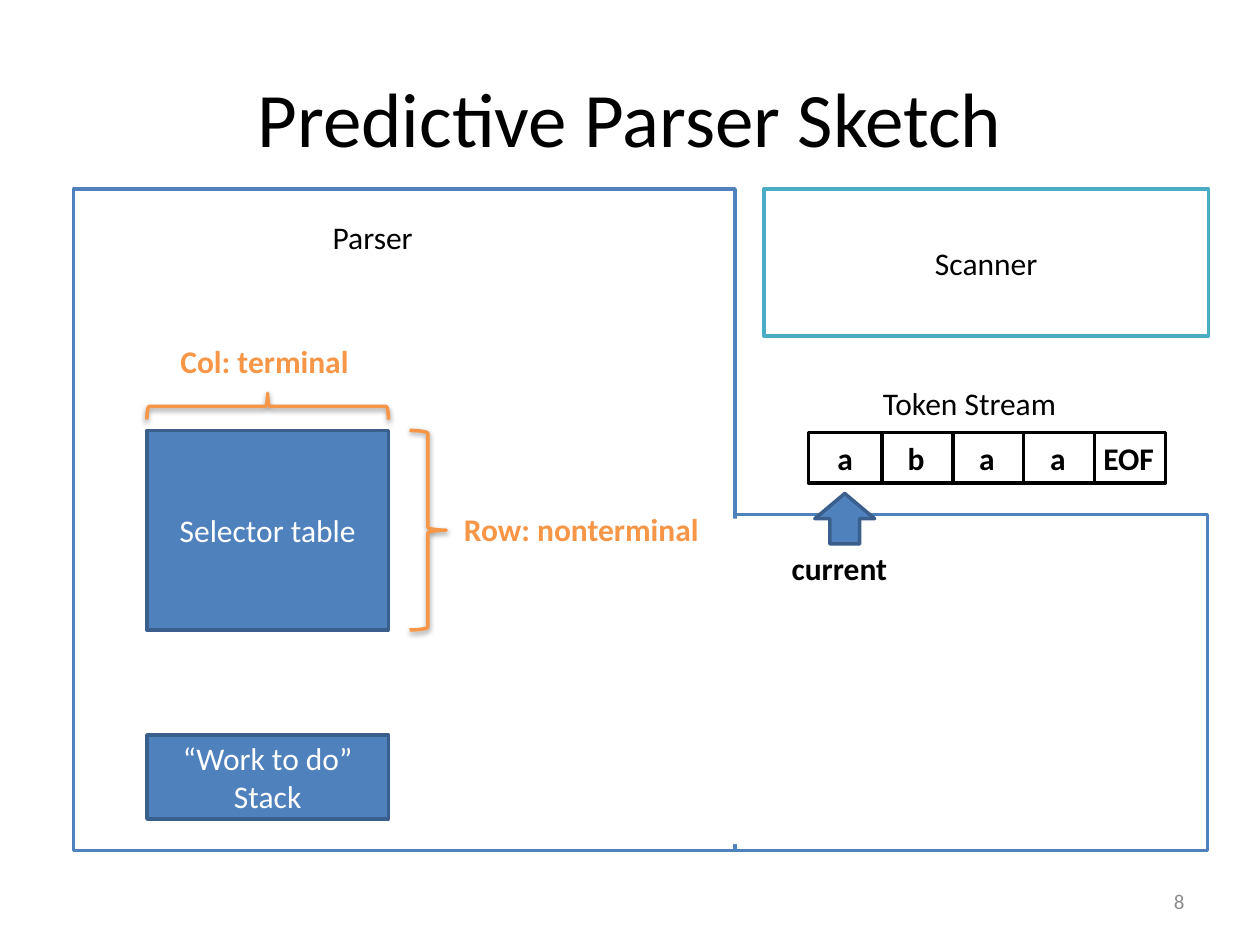
import pptx
import pptx.util
import pptx.dml.color
import pptx.enum.shapes
import pptx.enum.text
import pptx.oxml
import pptx.oxml.ns

KIND = pptx.enum.shapes.MSO_SHAPE
ALIGN = pptx.enum.text.PP_ALIGN
ANCHOR = pptx.enum.text.MSO_ANCHOR
FONT = "Calibri"
COLS, ROWS = 120, 90
HEX = {"white": "FFFFFF", "black": "000000", "blue": "4F81BD", "navy": "3A5F8C",
       "teal": "4BACC6", "orange": "F79646", "gray": "8C8C8C"}

TITLE = ("Predictive Parser Sketch", (6, 3.6, 108, 15))
PANELS = [
    ((68, 49, 47, 32), "white", "blue", []),
    ((7, 18, 63, 63), "white", "blue", []),
    ((68, 49.4, 4.8, 31), "white", None, []),
    ((72.75, 18, 42.35, 14), "white", "teal", ["Scanner"]),
    ((14, 41, 23, 19), "blue", "navy", ["Selector table"]),
    ((14, 70, 23, 8), "blue", "navy", ["“Work to do”", "Stack"]),
]
TOKENS = ["a", "b", "a", "a", "EOF"]
TOKEN = (77, 41.2, 7, 4.8)
PITCH = 6.75
BRACES = [((39, 41, 3.5, 19), 0), ((24.25, 27.2, 2.5, 23), 270)]
ARROW = (77.6, 47, 5.7, 4.8)
LABELS = [
    ("Token Stream", (82.9, 36, 19.1, 4.8), "black", False, ALIGN.LEFT, 18),
    ("Row: nonterminal", (43, 48, 25, 4.8), "orange", True, ALIGN.LEFT, 18),
    ("Col: terminal", (16, 32, 18.6, 4.8), "orange", True, ALIGN.LEFT, 18),
    ("current", (72.7, 51.7, 14.5, 4.8), "black", True, ALIGN.CENTER, 18),
    ("Parser", (30.5, 20.2, 20.5, 4.8), "black", False, ALIGN.LEFT, 18),
    ("8", (86, 83.4, 28, 4.8), "gray", False, ALIGN.RIGHT, 12),
]
SHADOW = (
    '<a:effectLst %s><a:outerShdw blurRad="40000" dist="20000" dir="5400000" rotWithShape="0">'
    '<a:srgbClr val="000000"><a:alpha val="38000"/></a:srgbClr></a:outerShdw></a:effectLst>'
    % pptx.oxml.ns.nsdecls("a"))

deck = pptx.Presentation()
deck.slide_width = pptx.util.Inches(10)
deck.slide_height = pptx.util.Inches(7.5)
slide = deck.slides.add_slide(deck.slide_layouts[5])


def place(box):
    x, y, w, h = box
    wide, high = deck.slide_width / COLS, deck.slide_height / ROWS
    return [round(v) for v in (x * wide, y * high, w * wide, h * high)]


def tint(name):
    return pptx.dml.color.RGBColor.from_string(HEX[name])


def write(shape, lines, color, size=18, bold=False, align=ALIGN.CENTER):
    frame = shape.text_frame
    frame.word_wrap = True
    frame.vertical_anchor = ANCHOR.MIDDLE
    for i, line in enumerate(lines):
        para = frame.add_paragraph() if i else frame.paragraphs[0]
        para.alignment = align
        run = para.add_run()
        run.text = line
        font = run.font
        font.name, font.size, font.bold = FONT, pptx.util.Pt(size), bold
        font.color.rgb = tint(color)
    return frame


def draw(kind, box, fill, line):
    shape = slide.shapes.add_shape(kind, *place(box))
    shape.shadow.inherit = False
    if fill:
        shape.fill.solid()
        shape.fill.fore_color.rgb = tint(fill)
    else:
        shape.fill.background()
    if line:
        shape.line.color.rgb = tint(line)
        shape.line.width = pptx.util.Pt(2)
    else:
        shape.line.fill.background()
    return shape


title = slide.shapes.title
title.left, title.top, title.width, title.height = place(TITLE[1])
write(title, [TITLE[0]], "black", 44)

for box, fill, line, words in PANELS:
    panel = draw(KIND.RECTANGLE, box, fill, line)
    if words:
        write(panel, words, "white" if fill == "blue" else "black")

left, top, wide, high = TOKEN
for i, word in reversed(list(enumerate(TOKENS))):
    cell = draw(KIND.RECTANGLE, (left + i * PITCH, top, wide, high), "white", "black")
    frame = write(cell, [word], "black", bold=True)
    frame.margin_left = frame.margin_right = pptx.util.Inches(0.05)
    frame.margin_top = frame.margin_bottom = pptx.util.Inches(0.05)

for box, turn in BRACES:
    brace = draw(KIND.RIGHT_BRACE, box, None, "orange")
    brace.rotation = turn
    props = brace.element.spPr
    old = props.find(pptx.oxml.ns.qn("a:effectLst"))
    props.replace(old, pptx.oxml.parse_xml(SHADOW))

arrow = draw(KIND.DOWN_ARROW, ARROW, "blue", "navy")
arrow.rotation = 180

for word, box, color, bold, align, size in LABELS:
    label = slide.shapes.add_textbox(*place(box))
    frame = write(label, [word], color, size, bold, align)
    frame.word_wrap = align != ALIGN.LEFT

deck.save("out.pptx")
